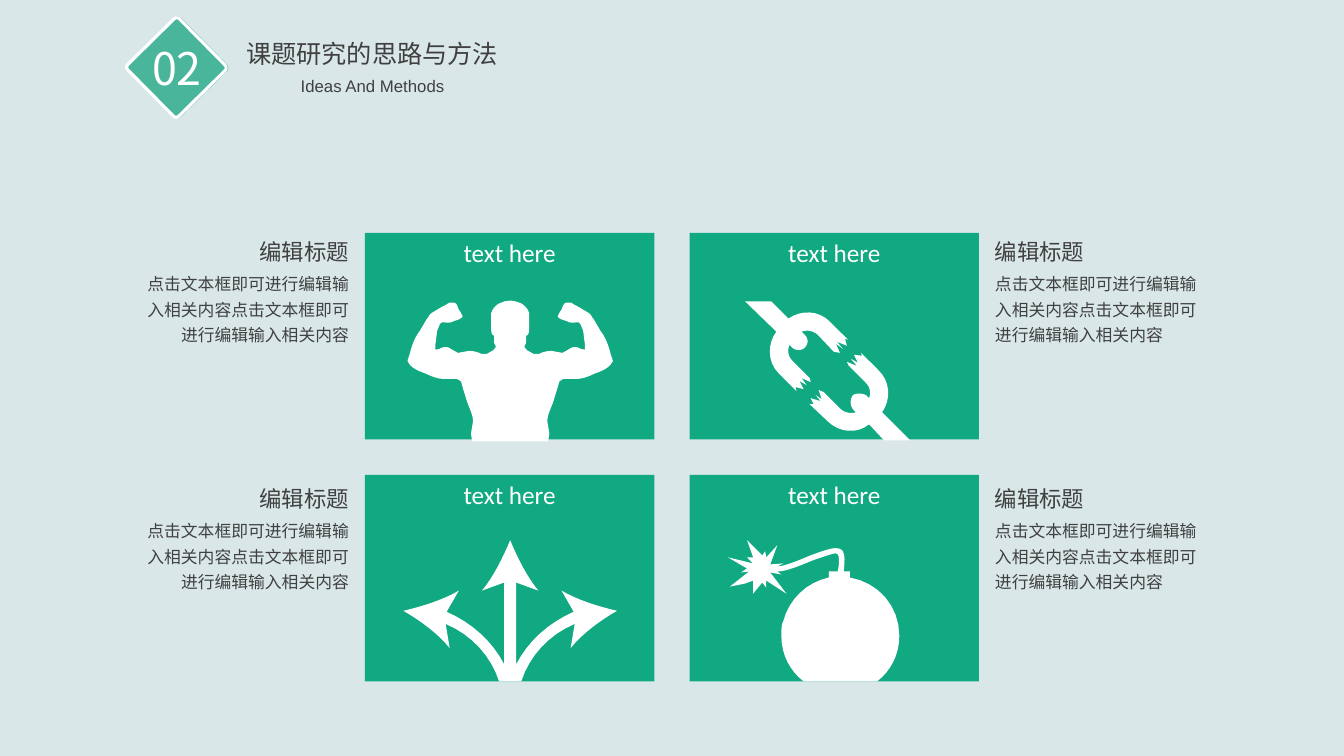
from dataclasses import dataclass

from lxml import etree
from pptx import Presentation
from pptx import util as u
from pptx.dml.color import RGBColor
from pptx.enum import shapes, text
from pptx.oxml.ns import qn

GREEN, MINT, WHITE, GREY = "10A981", "49B59A", "FFFFFF", "404040"
SANS = "Noto Sans CJK SC"
LEFT, CENTER, RIGHT = text.PP_ALIGN.LEFT, text.PP_ALIGN.CENTER, text.PP_ALIGN.RIGHT
CARD_WIDTH, CARD_HEIGHT = 2.87, 2.05
LABEL_WIDTH, CAPTION_WIDTH, BODY_WIDTH = 1.61, 1.41, 2.28
MIDDLE = 5.06  # mirror axis of the two symmetric icons
CAPTION = "编辑标题"
BODY = "点击文本框即可进行编辑输入相关内容点击文本框即可进行编辑输入相关内容"

# Outline steps: (x, y) is a straight edge, six numbers are a Bézier curve.
Step = tuple[float, ...]
Outline = list[Step]

HALF_MAN: Outline = [
    (4.69, 4.37), (4.68, 4.3), (4.7, 4.18), (4.7, 4.11, 4.66, 4.04, 4.64, 3.98),
    (4.6, 3.85), (4.58, 3.78), (4.57, 3.77, 4.54, 3.75, 4.52, 3.75), (4.4, 3.75),
    (4.35, 3.75, 4.29, 3.73, 4.23, 3.7), (4.18, 3.68, 4.11, 3.66, 4.07, 3.61),
    (4.05, 3.58), (4.07, 3.52), (4.09, 3.44, 4.12, 3.35, 4.17, 3.29), (4.24, 3.17),
    (4.26, 3.15, 4.26, 3.13, 4.29, 3.11), (4.39, 3.05), (4.43, 3.03), (4.46, 3.01),
    (4.5, 3.01), (4.53, 3.02, 4.53, 3.05, 4.54, 3.07), (4.56, 3.1), (4.58, 3.14),
    (4.55, 3.16), (4.49, 3.18), (4.46, 3.2, 4.43, 3.19, 4.4, 3.19),
    (4.35, 3.18, 4.35, 3.24, 4.33, 3.27), (4.32, 3.32, 4.32, 3.36, 4.31, 3.41),
    (4.31, 3.48), (4.36, 3.47), (4.4, 3.45, 4.43, 3.44, 4.47, 3.47), (4.54, 3.51),
    (4.65, 3.49), (4.69, 3.49, 4.74, 3.5, 4.77, 3.52), (4.83, 3.52), (4.9, 3.48),
    (4.93, 3.44), (4.91, 3.4), (4.91, 3.32), (4.88, 3.33, 4.88, 3.27, 4.88, 3.25),
    (4.88, 3.11), (4.89, 3.07, 4.92, 3.04, 4.95, 3.02), (5, 3), (5.06, 2.99),
]
HALF_ARROWS: Outline = [
    (4.95, 6.76), (4.87, 6.51, 4.68, 6.3, 4.42, 6.19), (4.46, 6.43),
    (4.35, 6.29, 4.16, 6.15, 4, 6.06), (4.18, 6.02, 4.4, 5.95, 4.55, 5.86),
    (4.43, 6.07), (4.68, 6.18, 4.88, 6.36, 5, 6.59), (5, 5.78), (4.78, 5.86),
    (4.89, 5.73, 4.99, 5.53, 5.06, 5.36),
]
UPPER_CHAIN: Outline = [
    (8.38, 3.36), (8.4, 3.43), (8.3, 3.39), (8.36, 3.46), (8.29, 3.41), (8.33, 3.5),
    (8.27, 3.49), (8.11, 3.32), (8.06, 3.28, 8.01, 3.27, 7.95, 3.29), (7.98, 3.32),
    (8.02, 3.36, 8.02, 3.41, 7.98, 3.45), (7.95, 3.48, 7.89, 3.48, 7.86, 3.45),
    (7.83, 3.42), (7.81, 3.47, 7.81, 3.53, 7.86, 3.58), (8.03, 3.75), (8.04, 3.79),
    (7.95, 3.75), (8, 3.82), (7.93, 3.78), (7.97, 3.86), (7.89, 3.84), (7.9, 3.88),
    (7.72, 3.7), (7.61, 3.59, 7.61, 3.41, 7.7, 3.29), (7.39, 2.99), (7.65, 2.99),
    (7.82, 3.16), (7.95, 3.07, 8.12, 3.08, 8.23, 3.19), (8.41, 3.37),
]
LOWER_CHAIN: Outline = [
    (9.03, 4.37), (8.77, 4.37), (8.62, 4.21), (8.5, 4.31, 8.32, 4.29, 8.21, 4.18),
    (8.03, 4.01), (8.07, 4.01), (8.04, 3.95), (8.14, 3.98), (8.09, 3.92), (8.15, 3.96),
    (8.12, 3.87), (8.17, 3.89), (8.34, 4.06), (8.37, 4.09, 8.44, 4.11, 8.49, 4.09),
    (8.46, 4.06), (8.43, 4.02, 8.43, 3.96, 8.46, 3.92),
    (8.49, 3.9, 8.55, 3.9, 8.59, 3.92), (8.62, 3.95),
    (8.64, 3.9, 8.63, 3.84, 8.59, 3.8), (8.42, 3.63), (8.4, 3.59), (8.5, 3.63),
    (8.44, 3.56), (8.51, 3.6), (8.47, 3.52), (8.55, 3.53), (8.54, 3.5), (8.71, 3.67),
    (8.83, 3.78, 8.84, 3.96, 8.75, 4.09),
]
BOMB: Outline = [
    (8.92, 6.31), (8.92, 6.5, 8.83, 6.66, 8.7, 6.76), (7.97, 6.76),
    (7.84, 6.66, 7.75, 6.5, 7.75, 6.31), (7.75, 6.25, 7.75, 6.2, 7.77, 6.16),
    (7.83, 5.94, 8, 5.78, 8.22, 5.73), (8.22, 5.67), (8.31, 5.67),
    (8.32, 5.62, 8.33, 5.53, 8.31, 5.5), (8.29, 5.49),
    (8.26, 5.49, 8.15, 5.53, 8.06, 5.56), (7.92, 5.62, 7.79, 5.67, 7.71, 5.67),
    (7.75, 5.7), (7.64, 5.68), (7.8, 5.89), (7.6, 5.76), (7.6, 5.83), (7.56, 5.78),
    (7.47, 5.89), (7.47, 5.76), (7.39, 5.79), (7.24, 5.82), (7.43, 5.67), (7.35, 5.68),
    (7.41, 5.64), (7.22, 5.53), (7.47, 5.59), (7.41, 5.53), (7.47, 5.53), (7.41, 5.36),
    (7.56, 5.51), (7.59, 5.47), (7.6, 5.53), (7.71, 5.41), (7.64, 5.6), (7.77, 5.59),
    (7.71, 5.62), (7.78, 5.62, 7.92, 5.56, 8.04, 5.51),
    (8.15, 5.47, 8.26, 5.43, 8.3, 5.44), (8.32, 5.44, 8.35, 5.45, 8.36, 5.47),
    (8.39, 5.53, 8.37, 5.62, 8.37, 5.67), (8.43, 5.67), (8.43, 5.73),
    (8.71, 5.78, 8.92, 6.01, 8.92, 6.31),
]


@dataclass(frozen=True)
class Style:
    size: float
    font: str = SANS
    color: str = GREY
    align: text.PP_ALIGN = CENTER
    spacing: float = 1.0


@dataclass(frozen=True)
class Card:
    left: float
    top: float
    caption_top: float
    align: text.PP_ALIGN
    icons: list[Outline]
    mirrored: bool = False
    outline_width: float = 0


CARDS = [
    Card(3.62, 2.31, 2.31, RIGHT, [HALF_MAN], True, 1.25),
    Card(6.84, 2.31, 2.31, LEFT, [UPPER_CHAIN, LOWER_CHAIN]),
    Card(3.62, 4.71, 4.76, RIGHT, [HALF_ARROWS], True),
    Card(6.84, 4.71, 4.76, LEFT, [BOMB]),
]


def rgb(color: str) -> RGBColor:
    return RGBColor.from_string(color)


def paint(shape, color: str, line: str = "", width: float = 0) -> None:
    shape.shadow.inherit = False
    shape.fill.solid()
    shape.fill.fore_color.rgb = rgb(color)
    if width:
        shape.line.color.rgb = rgb(line)
        shape.line.width = u.Pt(width)
    else:
        shape.line.fill.background()


def add_box(slide, kind, left: float, top: float, width: float, height: float):
    return slide.shapes.add_shape(kind, *map(u.Inches, (left, top, width, height)))


def write(shape, words: str, style: Style) -> None:
    frame = shape.text_frame
    frame.word_wrap = True
    frame.auto_size = text.MSO_AUTO_SIZE.SHAPE_TO_FIT_TEXT
    paragraph = frame.paragraphs[0]
    paragraph.text = words
    paragraph.alignment = style.align
    paragraph.line_spacing = style.spacing
    font = paragraph.font
    font.size, font.name = u.Pt(style.size), style.font
    font.color.rgb = rgb(style.color)
    # East Asian glyphs take their typeface from a separate element.
    defaults = paragraph._p.pPr.find(qn("a:defRPr"))
    etree.SubElement(defaults, qn("a:ea"), typeface=style.font)


def add_text(slide, words: str, style: Style, left: float, top: float,
             width: float, height: float) -> None:
    write(slide.shapes.add_textbox(*map(u.Inches, (left, top, width, height))), words, style)


def flatten(outline: Outline, pieces: int = 8) -> list[tuple[float, float]]:
    """Turn the steps into points, dividing each curve into short edges."""
    points = []
    for step in outline:
        if len(step) == 2:
            points.append(step)
            continue
        controls = [points[-1], step[:2], step[2:4], step[4:]]
        for piece in range(1, pieces + 1):
            t = piece / pieces
            weights = ((1 - t) ** 3, 3 * t * (1 - t) ** 2, 3 * t * t * (1 - t), t ** 3)
            points.append(tuple(sum(w * c[axis] for w, c in zip(weights, controls))
                                for axis in (0, 1)))
    return points


def add_icon(slide, outline: Outline, mirrored: bool, width: float) -> None:
    points = flatten(outline)
    if mirrored:
        points += [(2 * MIDDLE - x, y) for x, y in reversed(points)]
    start, *rest = [(u.Inches(x), u.Inches(y)) for x, y in points]
    builder = slide.shapes.build_freeform(*start)
    builder.add_line_segments(rest, close=True)
    paint(builder.convert_to_shape(), WHITE, WHITE, width)


def add_card(slide, card: Card) -> None:
    paint(add_box(slide, shapes.MSO_SHAPE.RECTANGLE, card.left, card.top,
                  CARD_WIDTH, CARD_HEIGHT), GREEN)
    for outline in card.icons:
        add_icon(slide, outline, card.mirrored, card.outline_width)
    label_left = card.left + (CARD_WIDTH - LABEL_WIDTH) / 2
    add_text(slide, "text here", Style(18, "Calibri", WHITE), label_left, card.top,
             LABEL_WIDTH, 0.4)
    for words, size, spacing, drop, width, height in (
        (BODY, 12, 1.25, 0.31, BODY_WIDTH, 0.86),
        (CAPTION, 16, 1.0, 0, CAPTION_WIDTH, 0.37),
    ):
        left = card.left + CARD_WIDTH + 0.06 if card.align == LEFT else card.left - 0.06 - width
        add_text(slide, words, Style(size, align=card.align, spacing=spacing),
                 left, card.caption_top + drop, width, height)


def add_header(slide) -> None:
    for top, side, corner, color, width in (
        (0.3, 0.74, 0.06, GREEN, 0), (0.31, 0.72, 0.05, MINT, 2.25),
    ):
        diamond = add_box(slide, shapes.MSO_SHAPE.ROUNDED_RECTANGLE, 1.39, top, side, side)
        diamond.adjustments[0] = corner
        diamond.rotation = 45.4
        paint(diamond, color, WHITE, width)
    add_text(slide, "02", Style(32, color=WHITE), 1.37, 0.35, 0.77, 0.64)
    add_text(slide, "课题研究的思路与方法", Style(18), 0.98, 0.33, 5.42, 0.4)
    subtitle = add_box(slide, shapes.MSO_SHAPE.SNIP_1_RECTANGLE, 0.95, 0.7, 5.49, 0.3)
    subtitle.adjustments[0] = 0
    subtitle.shadow.inherit = False
    subtitle.fill.background()
    subtitle.line.fill.background()
    write(subtitle, "Ideas And Methods", Style(12, "Arial"))


def main() -> None:
    presentation = Presentation()
    presentation.slide_width, presentation.slide_height = u.Inches(13.33), u.Inches(7.5)
    slide = presentation.slides.add_slide(presentation.slide_layouts[6])
    slide.background.fill.solid()
    slide.background.fill.fore_color.rgb = rgb("D9E7E8")
    add_header(slide)
    for card in CARDS:
        add_card(slide, card)
    presentation.save("out.pptx")


if __name__ == "__main__":
    main()
